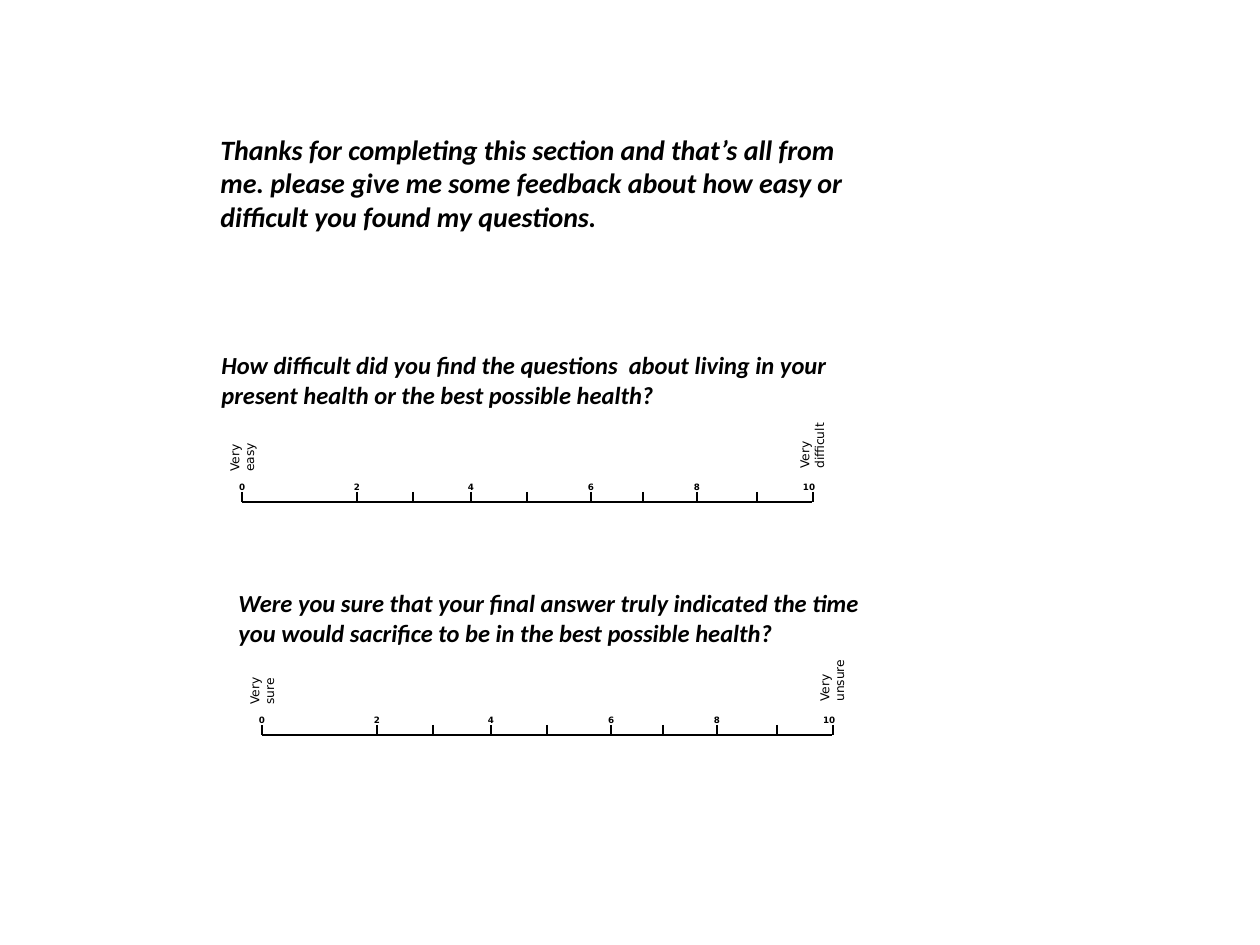
from pptx import Presentation
from pptx.dml.color import RGBColor
from pptx.enum.shapes import MSO_CONNECTOR as Conn
from pptx.enum.text import MSO_AUTO_SIZE as Fit
from pptx.oxml.ns import qn
from pptx.util import Pt
from lxml.etree import SubElement

INK = RGBColor(0, 0, 0)
HEAD, BODY = "Calibri", "DejaVu Sans"
STEP = 57
TICKS = [0, 115, 171, 229, 285, 349, 401, 455, 515, 571]
MARKS = [("0", -3), ("2", 112), ("4", 226), ("6", 346), ("8", 452), ("10", 561)]


def px(n):
    return round(n * 914400 / 126)


def add_text(shapes, box, text, size, face, bold=False, slant=False):
    shape = shapes.add_textbox(*map(px, box))
    frame = shape.text_frame
    frame.word_wrap = True
    frame.auto_size = Fit.SHAPE_TO_FIT_TEXT
    run = frame.paragraphs[0].add_run()
    run.text = text
    font = run.font
    font.name, font.size = face, Pt(size)
    font.bold, font.italic = bold, slant
    font.color.rgb = INK
    return shape


def add_line(shapes, x1, y1, x2, y2):
    line = shapes.add_connector(Conn.STRAIGHT, px(x1), px(y1), px(x2), px(y2))
    line.line.color.rgb = INK
    line.line.width = Pt(0.75)
    SubElement(line._element.spPr, qn("a:effectLst"))


def add_prompt(shapes, box, text, size):
    add_text(shapes, box, text, size, HEAD, bold=True, slant=True)


def add_scale(shapes, x, y, low, high):
    """Draw a 0 to 10 rating axis whose zero point is at x, y."""
    axis = shapes.add_group_shape().shapes
    for mark, dx in MARKS:
        box = (x + dx, y - 20, 8 * len(mark), 10)
        frame = add_text(axis, box, mark, 5, BODY, bold=True).text_frame
        frame.margin_left = frame.margin_right = 0
        frame.margin_top = frame.margin_bottom = 0
    for dx in TICKS:
        add_line(axis, x + dx, y - 10, x + dx, y)
    for i in range(10):
        add_line(axis, x + i * STEP, y, x + (i + 1) * STEP, y)
    for text, dx, dy in [(low, -35, -75), (high, 535, -78)]:
        shape = add_text(shapes, (x + dx, y + dy, 71, 43), text, 7, BODY)
        shape.rotation = 270


def main():
    deck = Presentation()
    deck.slide_width, deck.slide_height = px(1260), px(945)
    shapes = deck.slides.add_slide(deck.slide_layouts[6]).shapes
    add_prompt(shapes, (208, 126, 673, 115),
               "Thanks for completing this section and that’s all from me. "
               "please give me some feedback about how easy or difficult "
               "you found my questions.", 16)
    add_prompt(shapes, (209, 344, 673, 72),
               "How difficult did you find the questions  about living in "
               "your present health or the best possible health?", 14)
    add_scale(shapes, 242, 502, "Very easy", "Very difficult")
    add_prompt(shapes, (226, 582, 673, 72),
               "Were you sure that your final answer truly indicated the "
               "time you would sacrifice to be in the best possible health?", 14)
    add_scale(shapes, 262, 735, "Very sure", "Very unsure")
    deck.save("out.pptx")


if __name__ == "__main__":
    main()
